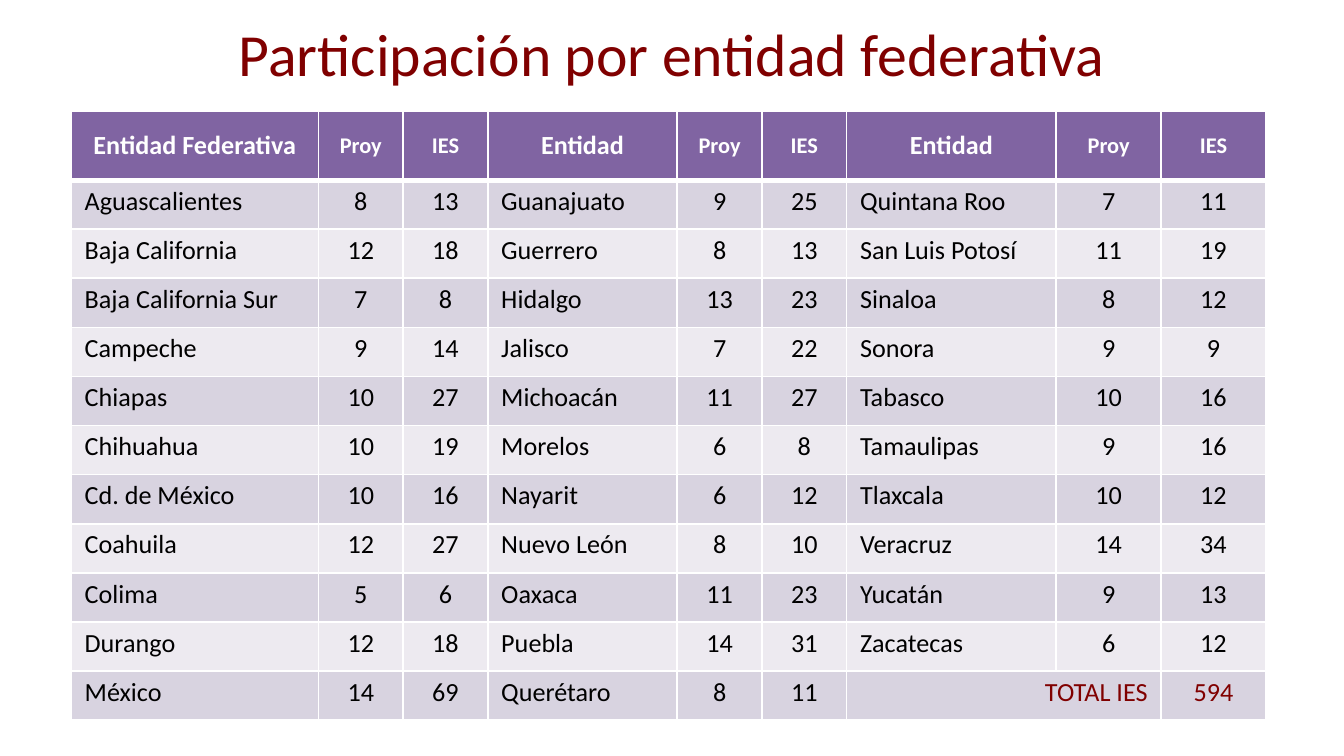
from dataclasses import dataclass

from lxml import etree
from pptx import Presentation
from pptx.dml.color import RGBColor
from pptx.enum.text import MSO_ANCHOR, PP_ALIGN
from pptx.oxml.ns import qn
from pptx.util import Inches, Pt

LEFT, CENTER, RIGHT = PP_ALIGN.LEFT, PP_ALIGN.CENTER, PP_ALIGN.RIGHT
TOP, MIDDLE = MSO_ANCHOR.TOP, MSO_ANCHOR.MIDDLE


@dataclass(frozen=True)
class Theme:
    """Colours, font and type sizes of the slide."""
    font: str = "Calibri"
    accent: RGBColor = RGBColor(0x80, 0x00, 0x00)
    header: RGBColor = RGBColor(0x80, 0x64, 0xA2)
    dark_band: RGBColor = RGBColor(0xD8, 0xD3, 0xE0)
    light_band: RGBColor = RGBColor(0xED, 0xEA, 0xF0)
    white: RGBColor = RGBColor(0xFF, 0xFF, 0xFF)
    black: RGBColor = RGBColor(0x00, 0x00, 0x00)
    title_size: int = 32
    body_size: int = 14
    small_size: int = 12
    header_rule: int = 3


THEME = Theme()
TITLE = "Participación por entidad federativa"
HEADINGS = ["Entidad Federativa", "Proy", "IES"] + ["Entidad", "Proy", "IES"] * 2
COLUMN_WIDTHS = [1.84, 0.63, 0.63, 1.41, 0.63, 0.63, 1.56, 0.78, 0.78]
HEADER_HEIGHT = 0.51
GROUP_SIZE = 3
STATES = [
    ("Aguascalientes", 8, 13, "Guanajuato", 9, 25, "Quintana Roo", 7, 11),
    ("Baja California", 12, 18, "Guerrero", 8, 13, "San Luis Potosí", 11, 19),
    ("Baja California Sur", 7, 8, "Hidalgo", 13, 23, "Sinaloa", 8, 12),
    ("Campeche", 9, 14, "Jalisco", 7, 22, "Sonora", 9, 9),
    ("Chiapas", 10, 27, "Michoacán", 11, 27, "Tabasco", 10, 16),
    ("Chihuahua", 10, 19, "Morelos", 6, 8, "Tamaulipas", 9, 16),
    ("Cd. de México", 10, 16, "Nayarit", 6, 12, "Tlaxcala", 10, 12),
    ("Coahuila", 12, 27, "Nuevo León", 8, 10, "Veracruz", 14, 34),
    ("Colima", 5, 6, "Oaxaca", 11, 23, "Yucatán", 9, 13),
    ("Durango", 12, 18, "Puebla", 14, 31, "Zacatecas", 6, 12),
    ("México", 14, 69, "Querétaro", 8, 11, "TOTAL IES", "", 594),
]


def format_text(frame, size, color, align, bold=False):
    """Format every paragraph and run of a text frame."""
    for paragraph in frame.paragraphs:
        paragraph.alignment = align
        for run in paragraph.runs:
            run.font.name = THEME.font
            run.font.size = Pt(size)
            run.font.bold = bold
            run.font.color.rgb = color


def fill_cell(cell, text, fill, size, color, align, anchor=TOP, bold=False):
    """Write and style one table cell."""
    cell.fill.solid()
    cell.fill.fore_color.rgb = fill
    cell.margin_left = cell.margin_right = Inches(0.1)
    cell.margin_top = cell.margin_bottom = Inches(0.04)
    cell.vertical_anchor = anchor
    if text != "":
        cell.text_frame.text = str(text)
        format_text(cell.text_frame, size, color, align, bold)


def rule_below(cell, color, width):
    """Draw a solid border along the bottom of a cell."""
    border = etree.Element(qn("a:lnB"), w=str(Pt(width)))
    fill = etree.SubElement(border, qn("a:solidFill"))
    etree.SubElement(fill, qn("a:srgbClr"), val=str(color))
    cell._tc.get_or_add_tcPr().insert(0, border)


def place_title(slide, left, top, width, height):
    """Place the heading in the title placeholder."""
    heading = slide.shapes.title
    heading.left, heading.top = Inches(left), Inches(top)
    heading.width, heading.height = Inches(width), Inches(height)
    heading.text_frame.text = TITLE
    heading.text_frame.vertical_anchor = MIDDLE
    format_text(heading.text_frame, THEME.title_size, THEME.accent, CENTER)


def place_participation(slide, left, top, width, height):
    """Place the table of projects and institutions by state."""
    frame = slide.shapes.add_table(
        len(STATES) + 1, len(HEADINGS),
        Inches(left), Inches(top), Inches(width), Inches(height))
    table = frame.table
    for column, share in zip(table.columns, COLUMN_WIDTHS):
        column.width = Inches(width * share / sum(COLUMN_WIDTHS))
    for row in table.rows:
        row.height = Inches((height - HEADER_HEIGHT) / len(STATES))
    table.rows[0].height = Inches(HEADER_HEIGHT)

    for col, heading in enumerate(HEADINGS):
        size = THEME.small_size if col % GROUP_SIZE else THEME.body_size
        fill_cell(table.cell(0, col), heading, THEME.header, size,
                  THEME.white, CENTER, MIDDLE, bold=True)
        rule_below(table.cell(0, col), THEME.white, THEME.header_rule)

    total_row, total_col = len(STATES), len(HEADINGS) - GROUP_SIZE
    for row, record in enumerate(STATES, start=1):
        band = THEME.dark_band if row % 2 else THEME.light_band
        for col, value in enumerate(record):
            is_total = row == total_row and col >= total_col
            color = THEME.accent if is_total else THEME.black
            align = CENTER if col % GROUP_SIZE else RIGHT if is_total else LEFT
            fill_cell(table.cell(row, col), value, band, THEME.body_size,
                      color, align)
    table.cell(total_row, total_col).merge(table.cell(total_row, total_col + 1))


def main():
    """Build and save the slide."""
    deck = Presentation()
    deck.slide_width = Inches(10)
    deck.slide_height = deck.slide_width * 9 // 16
    slide = deck.slides.add_slide(deck.slide_layouts[5])
    place_title(slide, 0.5, -0.08, 9, 0.94)
    place_participation(slide, 0.53, 0.83, 8.89, 4.53)
    deck.save("out.pptx")


if __name__ == "__main__":
    main()
